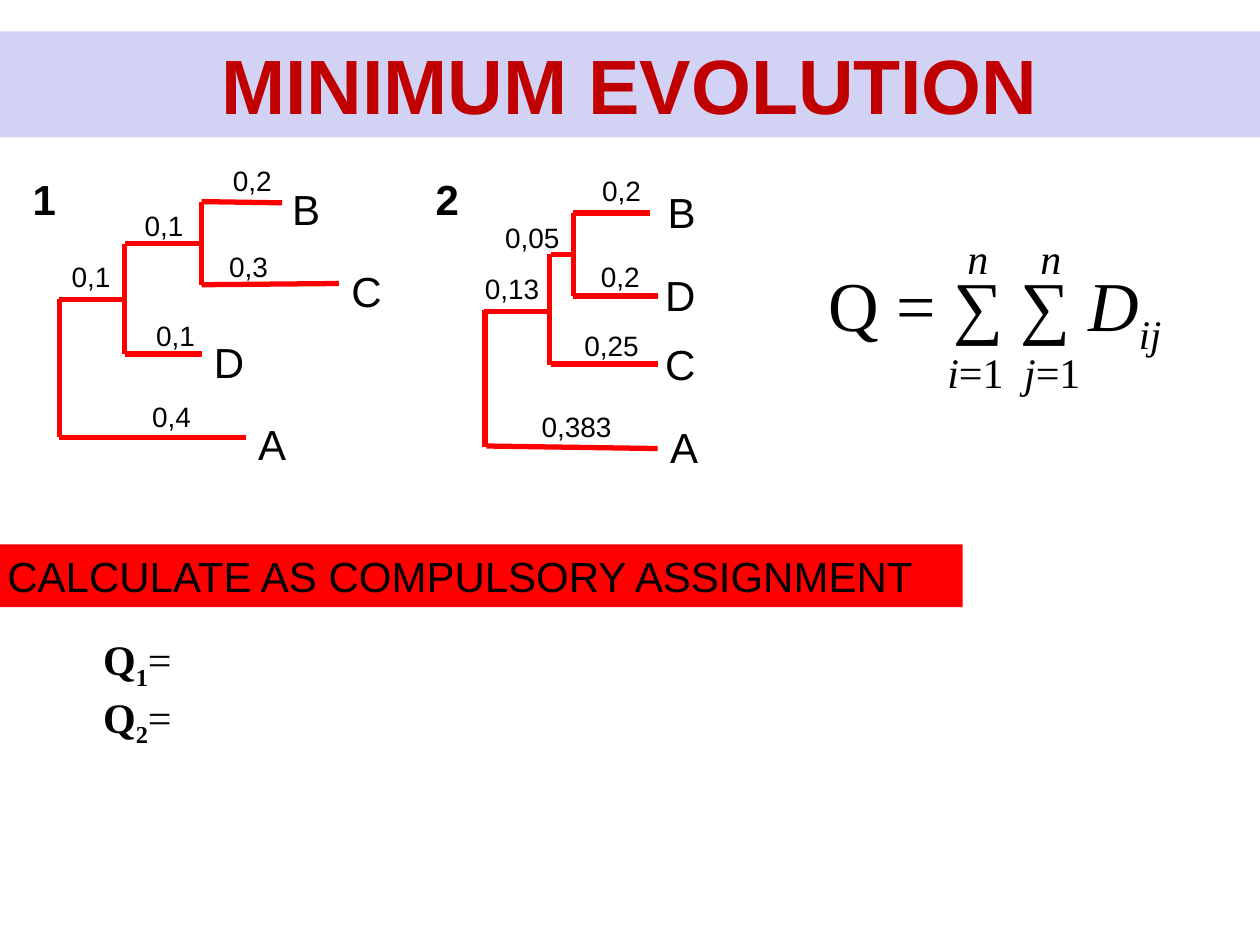
from lxml.etree import SubElement, Element
from pptx import Presentation
from pptx.dml.color import RGBColor
from pptx.enum.shapes import MSO_CONNECTOR, MSO_SHAPE
from pptx.enum.text import MSO_ANCHOR, MSO_AUTO_SIZE, PP_ALIGN
from pptx.oxml.ns import qn
from pptx.util import Inches, Pt

BLACK = RGBColor(0, 0, 0)
RED = RGBColor(0xFF, 0, 0)
DARK_RED = RGBColor(0xC0, 0, 0)
LAVENDER = RGBColor(0xD2, 0xD2, 0xF4)
SANS, SERIF = "Arial", "Times New Roman"

TREES = [
    {
        "number": ("1", 0.16, 1.33),
        "branches": [
            (1.6, 1.6, 2.24, 1.61), (1.6, 1.6, 1.6, 2.26), (1.6, 2.26, 2.69, 2.25),
            (0.99, 2.81, 1.6, 2.81), (0.99, 1.93, 1.6, 1.93), (0.99, 1.94, 0.99, 2.81),
            (0.47, 2.38, 0.99, 2.38), (0.47, 2.37, 0.47, 3.47), (0.47, 3.47, 1.95, 3.47),
        ],
        "taxa": [("B", 2.22, 1.41), ("C", 2.69, 2.06), ("D", 1.6, 2.62), ("A", 1.95, 3.27)],
        "lengths": [("0,2", 1.75, 1.25), ("0,3", 1.72, 1.93), ("0,1", 1.14, 2.48),
                    ("0,1", 1.05, 1.61), ("0,4", 1.11, 3.12), ("0,1", 0.47, 2.01)],
    },
    {
        "number": ("2", 3.36, 1.33),
        "branches": [
            (4.55, 1.69, 5.16, 1.69), (4.55, 1.69, 4.55, 2.35), (4.55, 2.35, 5.22, 2.35),
            (4.37, 2.89, 5.22, 2.89), (4.37, 2.02, 4.55, 2.02), (4.36, 2.02, 4.36, 2.9),
            (3.84, 2.47, 4.36, 2.47), (3.85, 2.46, 3.85, 3.55), (3.86, 3.54, 5.22, 3.56),
        ],
        "taxa": [("B", 5.2, 1.43), ("D", 5.18, 2.09), ("C", 5.18, 2.64), ("A", 5.22, 3.3)],
        "lengths": [("0,2", 4.68, 1.33), ("0,05", 3.91, 1.7), ("0,383", 4.2, 3.2),
                    ("0,13", 3.75, 2.11), ("0,2", 4.67, 2.01), ("0,25", 4.54, 2.56)],
    },
]

# style letters: b bold, i italic, s subscript
FORMULA = [
    ((6.48, 2.03, 2.85, 0.77), 40, [("Q = ∑ ∑ ", ""), ("D", "i"), ("ij", "is")], None),
    ((7.58, 1.8, 0.96, 0.5), 24, [("n\tn", "i")], 0.58),
    ((7.42, 2.7, 1.27, 0.5), 24, [("i", "i"), ("=1\t", ""), ("j", "i"), ("=1", "")], 0.61),
]
ANSWERS = [[("Q", "b"), (n, "bs"), ("=", "")] for n in "12"]
BANNERS = [
    ((0, 0.25, 10, 0.84), LAVENDER, "MINIMUM EVOLUTION", "b", 44, DARK_RED, PP_ALIGN.CENTER),
    ((-0.04, 4.32, 7.68, 0.5), RED, "CALCULATE AS COMPULSORY ASSIGNMENT", "", 24, BLACK,
     PP_ALIGN.LEFT),
]

prs = Presentation()
prs.slide_width, prs.slide_height = Inches(10), Inches(7.5)
slide = prs.slides.add_slide(prs.slide_layouts[6])


def write(p, runs, size, font=SANS, color=BLACK, tab=None):
    p.font.size, p.font.name = Pt(size), font
    p.font.color.rgb = color
    for text, style in runs:
        r = p.add_run()
        r.text = text
        r.font.bold, r.font.italic = "b" in style, "i" in style
        if "s" in style:
            r.font._element.set("baseline", "-25000")
    if tab:
        tabs = Element(qn("a:tabLst"))
        SubElement(tabs, qn("a:tab"), pos=str(Inches(tab)), algn="l")
        p._p.get_or_add_pPr().insert(0, tabs)


def add_text(box, paragraphs, size, font=SANS, tab=None):
    tf = slide.shapes.add_textbox(*map(Inches, box)).text_frame
    tf.word_wrap = False
    tf.auto_size = MSO_AUTO_SIZE.SHAPE_TO_FIT_TEXT
    for i, runs in enumerate(paragraphs):
        write(tf.add_paragraph() if i else tf.paragraphs[0], runs, size, font, tab=tab)


def add_banner(box, fill, text, style, size, color, align):
    sp = slide.shapes.add_shape(MSO_SHAPE.RECTANGLE, *map(Inches, box))
    sp.shadow.inherit = False
    sp.fill.solid()
    sp.fill.fore_color.rgb = fill
    sp.line.fill.background()
    tf = sp.text_frame
    tf.word_wrap = True
    tf.vertical_anchor = MSO_ANCHOR.TOP
    tf.paragraphs[0].alignment = align
    write(tf.paragraphs[0], [(text, style)], size, color=color)


def add_branch(ends):
    line = slide.shapes.add_connector(MSO_CONNECTOR.STRAIGHT, *map(Inches, ends))
    line.line.color.rgb = RED
    line.line.width = Pt(3)
    SubElement(line._element.spPr, qn("a:effectLst"))


def add_tree(tree):
    for ends in tree["branches"]:
        add_branch(ends)
    for name, x, y in tree["taxa"]:
        add_text((x, y, 0.44, 0.5), [[(name, "")]], 24)
    for value, x, y in tree["lengths"]:
        add_text((x, y, 0.14 + 0.124 * len(value), 0.37), [[(value, "")]], 16)
    number, x, y = tree["number"]
    add_text((x, y, 0.39, 0.5), [[(number, "b")]], 24)


for box, size, runs, tab in FORMULA:
    add_text(box, [runs], size, SERIF, tab)
for banner in BANNERS:
    add_banner(*banner)
for tree in TREES:
    add_tree(tree)
add_text((0.72, 4.98, 0.76, 0.91), ANSWERS, 24, SERIF)

prs.save("out.pptx")
